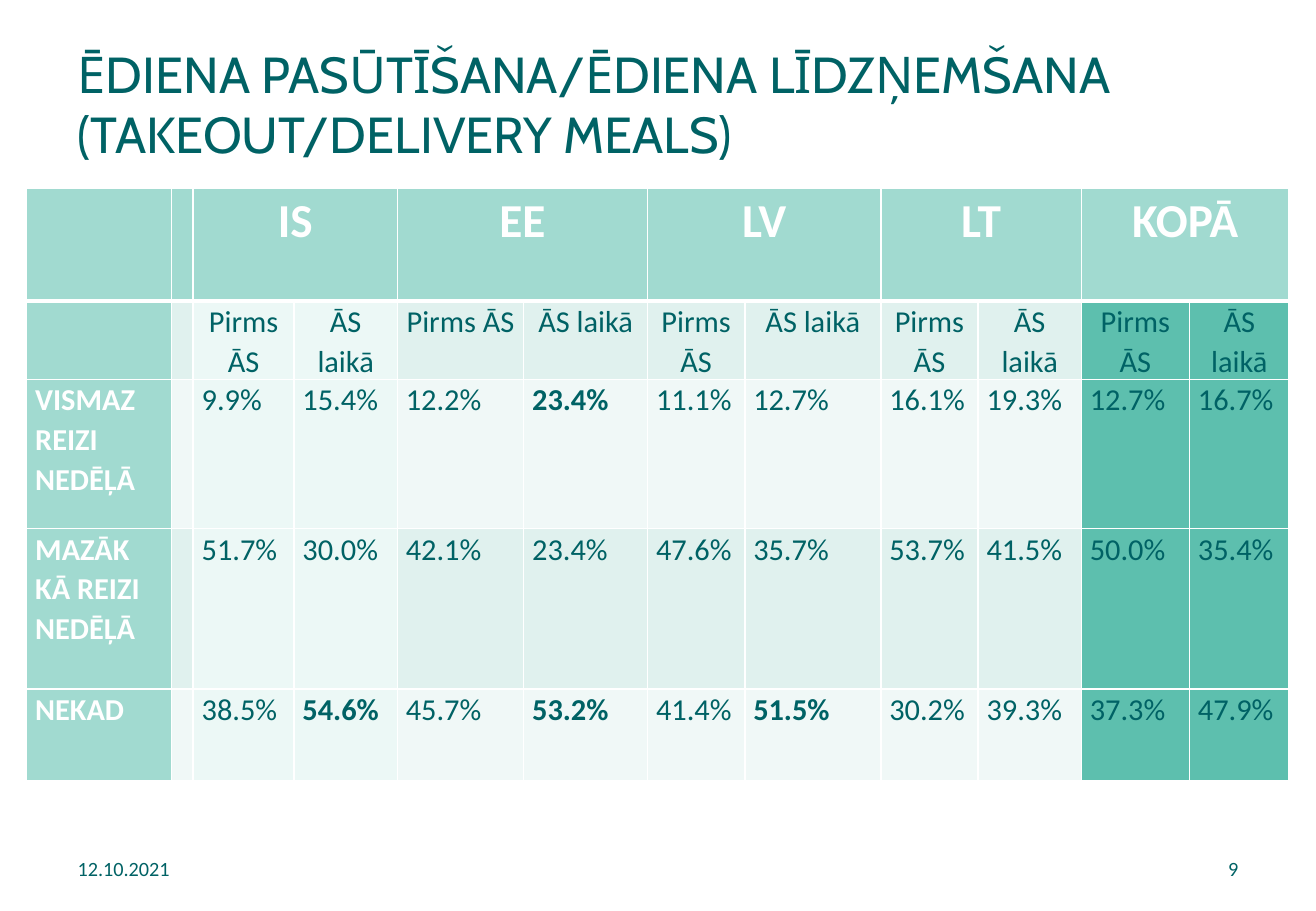
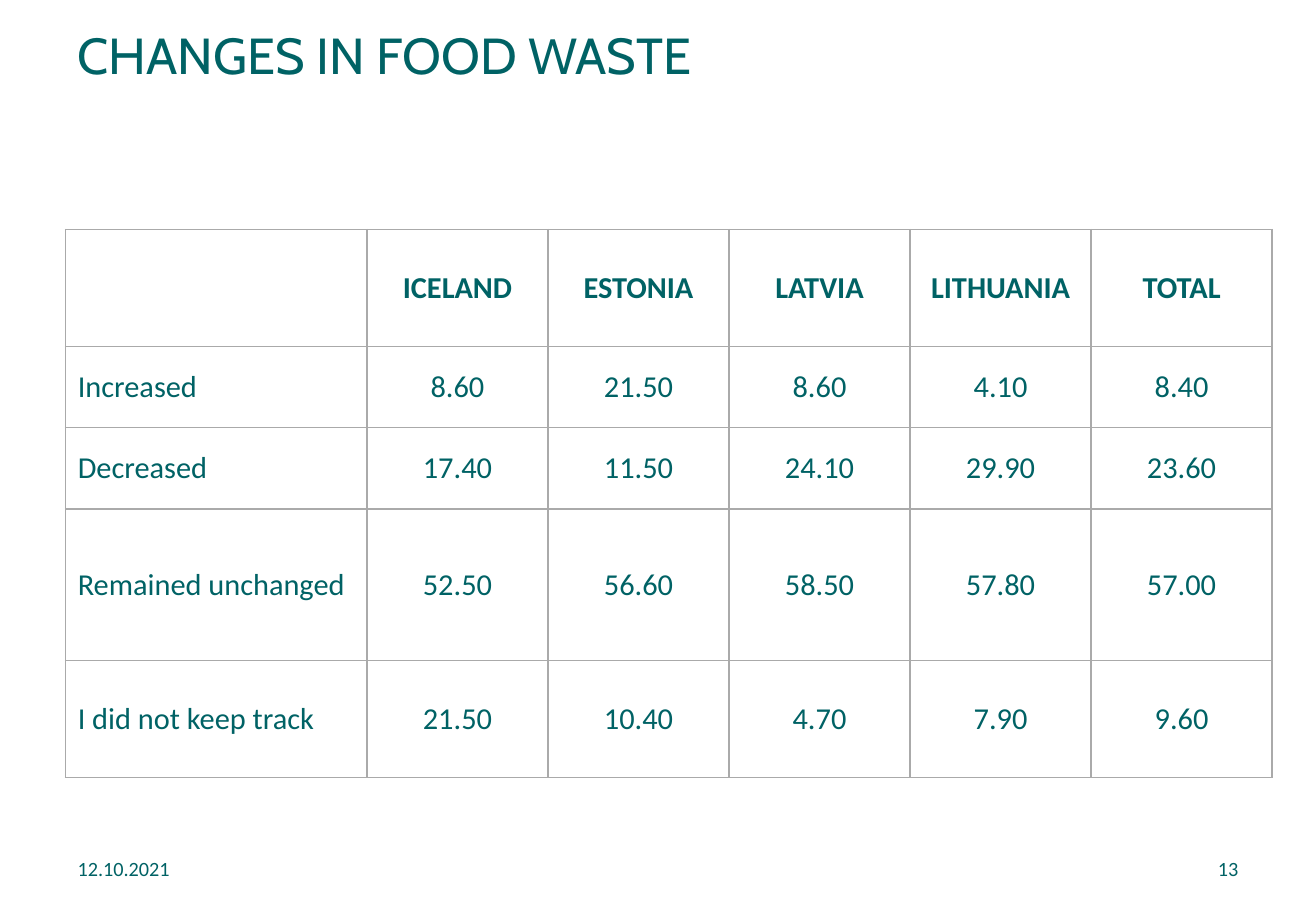
"""Build two slides with survey tables on takeout meals and food waste."""
from dataclasses import dataclass

from lxml import etree
from pptx import Presentation
from pptx.dml.color import RGBColor
from pptx.enum.text import MSO_ANCHOR, MSO_AUTO_SIZE, PP_ALIGN
from pptx.oxml.ns import qn
from pptx.util import Inches, Pt

TOP, MIDDLE = MSO_ANCHOR.TOP, MSO_ANCHOR.MIDDLE
LEFT, CENTER, RIGHT = PP_ALIGN.LEFT, PP_ALIGN.CENTER, PP_ALIGN.RIGHT
NO_FIT = MSO_AUTO_SIZE.NONE


@dataclass(frozen=True)
class Theme:
    """Colours, fonts and type sizes."""
    ink: str = "006265"
    white: str = "FFFFFF"
    head: str = "A1DAD0"
    pale: str = "ECF8F6"
    dark_band: str = "E0F1EE"
    light_band: str = "F0F8F7"
    total: str = "5DBFAE"
    grid: str = "AAAAAA"
    title_font: str = "Cabin"
    body_font: str = "Calibri"
    title_size: int = 30
    group_size: int = 28
    cell_size: int = 18
    foot_size: int = 12


THEME = Theme()
DATE = "12.10.2021"

MEALS_TITLE = "ĒDIENA PASŪTĪŠANA/ĒDIENA LĪDZŅEMŠANA (TAKEOUT/DELIVERY MEALS)"
GROUPS = ["IS", "EE", "LV", "LT", "KOPĀ"]
PERIODS = ["Pirms ĀS", "ĀS laikā"]
MEALS = [
    ("VISMAZ REIZI NEDĒĻĀ", ["9.9%", "15.4%", "12.2%", "23.4%", "11.1%",
                             "12.7%", "16.1%", "19.3%", "12.7%", "16.7%"]),
    ("MAZĀK KĀ REIZI NEDĒĻĀ", ["51.7%", "30.0%", "42.1%", "23.4%", "47.6%",
                               "35.7%", "53.7%", "41.5%", "50.0%", "35.4%"]),
    ("NEKAD", ["38.5%", "54.6%", "45.7%", "53.2%", "41.4%",
               "51.5%", "30.2%", "39.3%", "37.3%", "47.9%"]),
]
MEALS_BOLD = {(2, 5), (4, 3), (4, 5), (4, 7)}
MEALS_COLS = [1.19, 0.18, 0.83, 0.85, 1.04, 1.02, 0.8, 1.12, 0.8, 0.85, 0.89, 0.82]
MEALS_ROWS = [0.93, 0.64, 1.23, 1.32, 0.76]

WASTE_TITLE = "CHANGES IN FOOD WASTE"
WASTE = [
    [""] * 6,
    ["", "ICELAND", "ESTONIA", "LATVIA", "LITHUANIA", "TOTAL"],
    ["Increased", "8.60", "21.50", "8.60", "4.10", "8.40"],
    ["Decreased", "17.40", "11.50", "24.10", "29.90", "23.60"],
    ["Remained unchanged", "52.50", "56.60", "58.50", "57.80", "57.00"],
    ["I did not keep track", "21.50", "10.40", "4.70", "7.90", "9.60"],
]
WASTE_COLS = [2.48] + [1.49] * 5
WASTE_ROWS = [0.4, 0.96, 0.67, 0.67, 1.25, 0.96]


def write(frame, text, size, font=THEME.body_font, color=THEME.ink,
          bold=False, align=LEFT):
    """Put one formatted paragraph in a text frame and return it."""
    frame.text = text
    para = frame.paragraphs[0]
    para.alignment = align
    for run in para.runs:
        run.font.size, run.font.name, run.font.bold = Pt(size), font, bold
        run.font.color.rgb = RGBColor.from_string(color)
    return para


def add_page(deck, title, top, number):
    """Add a slide with its title, date and page number."""
    slide = deck.slides.add_slide(deck.slide_layouts[5])
    head = slide.shapes.title
    head.left, head.top = Inches(0.54), Inches(top)
    head.width, head.height = Inches(9.75), Inches(0.85)
    frame = head.text_frame
    write(frame, title, THEME.title_size, THEME.title_font)
    frame.word_wrap, frame.auto_size = True, NO_FIT
    frame.vertical_anchor = TOP
    for left, text, align in ((0.54, DATE, LEFT), (7.76, str(number), RIGHT)):
        box = slide.shapes.add_textbox(Inches(left), Inches(6.95),
                                       Inches(2.53), Inches(0.4))
        write(box.text_frame, text, THEME.foot_size, align=align)
        box.text_frame.word_wrap = True
        box.text_frame.vertical_anchor = MIDDLE
    return slide


def add_grid(slide, left, top, cols, rows):
    """Add a plain table with the given column widths and row heights."""
    table = slide.shapes.add_table(
        len(rows), len(cols), Inches(left), Inches(top),
        Inches(sum(cols)), Inches(sum(rows))).table
    table.first_row = table.horz_banding = False
    for col, width in zip(table.columns, cols):
        col.width = Inches(width)
    for row, height in zip(table.rows, rows):
        row.height = Inches(height)
    return table


def edge(cell, color, **widths):
    """Draw the L, R, T and B borders of a cell; width 0 means none."""
    props = cell._tc.get_or_add_tcPr()
    for spot, side in enumerate("LRTB"):
        width = widths.get(side, 1)
        line = etree.Element(qn(f"a:ln{side}"), w=str(Pt(width)))
        if width:
            fill = etree.SubElement(line, qn("a:solidFill"))
            etree.SubElement(fill, qn("a:srgbClr"), val=color)
        else:
            etree.SubElement(line, qn("a:noFill"))
        props.insert(spot, line)


def meal_fill(row, col):
    """Choose the fill of a cell in the meals table."""
    if row == 0 or col == 0:
        return THEME.head
    if col >= 10:
        return THEME.total
    if col in (2, 3):
        return THEME.pale
    return THEME.dark_band if row % 2 else THEME.light_band


def meals(deck):
    """Build the slide on takeout meals."""
    slide = add_page(deck, MEALS_TITLE, 0.3, 9)
    table = add_grid(slide, 0.22, 1.55, MEALS_COLS, MEALS_ROWS)
    grid = [["", ""] + [text for name in GROUPS for text in (name, "")],
            ["", ""] + PERIODS * len(GROUPS)]
    grid += [[label, ""] + values for label, values in MEALS]
    for r, texts in enumerate(grid):
        for c, text in enumerate(texts):
            cell = table.cell(r, c)
            cell.margin_left = cell.margin_right = Inches(0.07)
            cell.margin_top = cell.margin_bottom = 0
            cell.fill.solid()
            cell.fill.fore_color.rgb = RGBColor.from_string(meal_fill(r, c))
            edge(cell, THEME.white, T=3 if r == 1 else 1, B=3 if r == 0 else 1)
            if text:
                head = r == 0 or c == 0
                para = write(cell.text_frame, text,
                             THEME.cell_size if r else THEME.group_size,
                             color=THEME.white if head else THEME.ink,
                             bold=head or (r, c) in MEALS_BOLD,
                             align=CENTER if r < 2 else LEFT)
                para.line_spacing = 1.07
    for c in range(2, len(MEALS_COLS), 2):
        table.cell(0, c).merge(table.cell(0, c + 1))


def waste(deck):
    """Build the slide on food waste."""
    slide = add_page(deck, WASTE_TITLE, 0.15, 13)
    table = add_grid(slide, 0.54, 1.49, WASTE_COLS, WASTE_ROWS)
    last = len(WASTE) - 1
    for r, texts in enumerate(WASTE):
        for c, text in enumerate(texts):
            cell = table.cell(r, c)
            cell.vertical_anchor = MIDDLE
            cell.fill.background()
            side = 1 if r else 0
            edge(cell, THEME.grid, L=side, R=side, T=side,
                 B=0.5 if r == last else 1)
            if text:
                write(cell.text_frame, text, THEME.cell_size, bold=r == 1,
                      align=CENTER if c else LEFT)


def main():
    """Build and save the deck."""
    deck = Presentation()
    deck.slide_width, deck.slide_height = Inches(10.83), Inches(7.5)
    meals(deck)
    waste(deck)
    deck.save("out.pptx")


if __name__ == "__main__":
    main()
